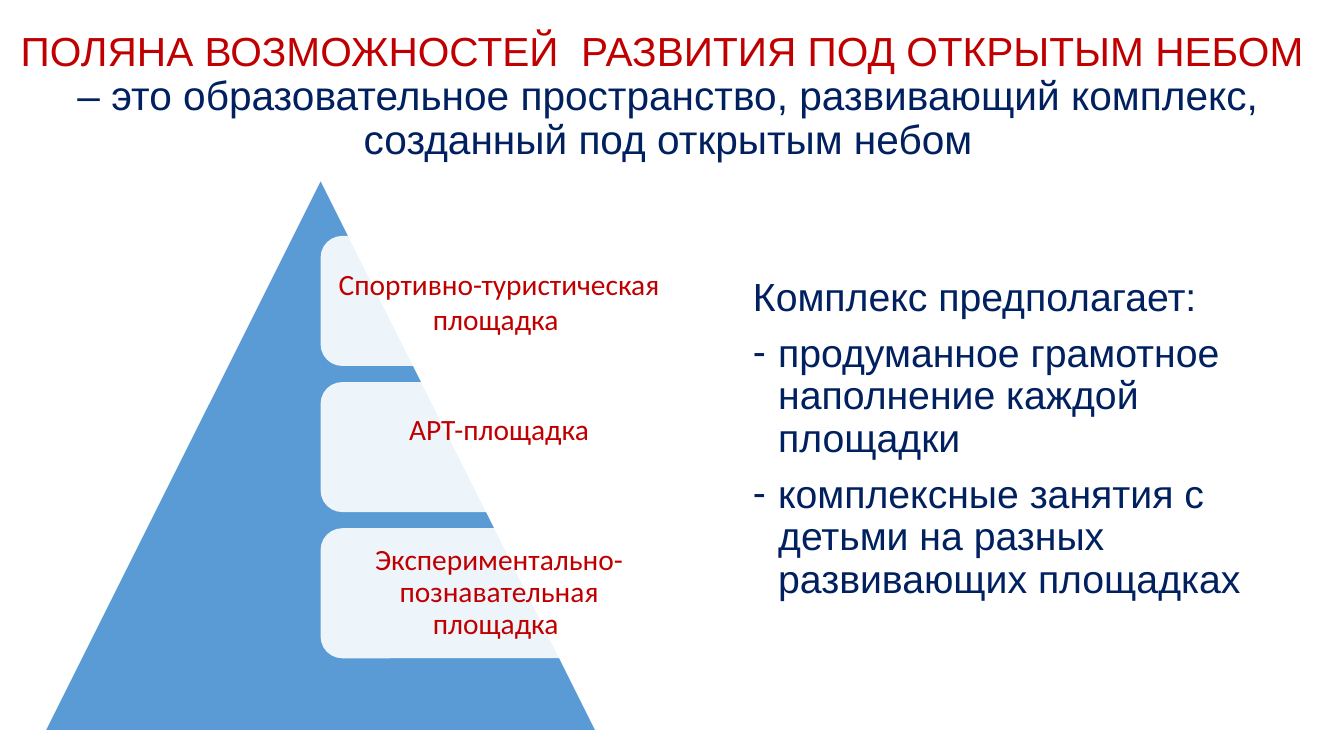
"""Builds the slide about the open-air development site."""
from lxml.etree import SubElement
from pptx import Presentation
from pptx.dml.color import RGBColor
from pptx.enum.shapes import MSO_SHAPE
from pptx.enum.text import MSO_ANCHOR, MSO_AUTO_SIZE, PP_ALIGN
from pptx.oxml.ns import qn
from pptx.util import Inches, Pt

COLORS = {"red": "C00000", "navy": "002060", "blue": "5B9BD5", "white": "FFFFFF"}


def add_run(p, text, size, font, color):
    r = p.add_run()
    r.text = text
    r.font.size = Pt(size)
    r.font.name = font
    r.font.color.rgb = RGBColor.from_string(COLORS[color])


def add_filled(kind, left, top, width, height, color):
    sp = s.shapes.add_shape(kind, Inches(left), Inches(top), Inches(width), Inches(height))
    sp.shadow.inherit = False
    sp.fill.solid()
    sp.fill.fore_color.rgb = RGBColor.from_string(COLORS[color])
    sp.line.fill.background()
    return sp


prs = Presentation()
prs.slide_width, prs.slide_height = Inches(13.33), Inches(7.5)
s = prs.slides.add_slide(prs.slide_layouts[5])

title = s.shapes.title
title.left, title.top = Inches(0), Inches(0.24)
title.width, title.height = Inches(13.26), Inches(1.45)
tf = title.text_frame
tf.word_wrap = True
tf.auto_size = MSO_AUTO_SIZE.NONE
tf.vertical_anchor = MSO_ANCHOR.MIDDLE
p = tf.paragraphs[0]
p.alignment = PP_ALIGN.CENTER
p.line_spacing = 0.9
add_run(p, "ПОЛЯНА ВОЗМОЖНОСТЕЙ  РАЗВИТИЯ ПОД ОТКРЫТЫМ НЕБОМ ", 29, "Arial", "red")
p.add_line_break()
add_run(p, "– это образовательное пространство, развивающий комплекс, созданный под открытым небом",
        29, "Arial", "navy")

add_filled(MSO_SHAPE.ISOSCELES_TRIANGLE, 0.46, 1.8, 5.44, 5.44, "blue")

CARD_TOP, CARD_PITCH, INSET = 2.34, 1.45, 0.09
cards = [
    ("Спортивно-туристическая площадка ", 1.0, INSET),
    ("АРТ-площадка", 1.0, INSET + 0.36),
    ("Экспериментально-познавательная площадка ", 0.9, INSET),
]
for i, (label, spacing, bottom) in enumerate(cards):
    card = add_filled(MSO_SHAPE.ROUNDED_RECTANGLE, 3.18, CARD_TOP + i * CARD_PITCH, 3.54, 1.29, "white")
    rgb = card.fill._xPr.find(qn("a:solidFill")).find(qn("a:srgbClr"))
    SubElement(rgb, qn("a:alpha"), val="90000")
    tf = card.text_frame
    tf.word_wrap = True
    tf.vertical_anchor = MSO_ANCHOR.MIDDLE
    tf.margin_left = tf.margin_right = tf.margin_top = Inches(INSET)
    tf.margin_bottom = Inches(bottom)
    p = tf.paragraphs[0]
    p.alignment = PP_ALIGN.CENTER
    p.line_spacing = spacing
    add_run(p, label, 21, "Calibri", "red")

body = s.shapes.add_textbox(Inches(7.37), Inches(2.7), Inches(5.37), Inches(4.09))
tf = body.text_frame
tf.word_wrap = True
points = [
    "Комплекс предполагает:",
    "продуманное грамотное наполнение каждой площадки",
    "комплексные занятия с детьми на разных развивающих площадках",
]
for i, point in enumerate(points):
    p = tf.add_paragraph() if i else tf.paragraphs[0]
    p.line_spacing = 0.9
    if i:
        p.space_before = Pt(10)
        pPr = p._p.get_or_add_pPr()
        pPr.set("marL", str(Inches(0.25)))
        pPr.set("indent", str(-Inches(0.25)))
        SubElement(pPr, qn("a:buFont"), typeface="Arial")
        SubElement(pPr, qn("a:buChar"), char="-")
    add_run(p, point, 28, "Arial", "navy")

prs.save("out.pptx")
